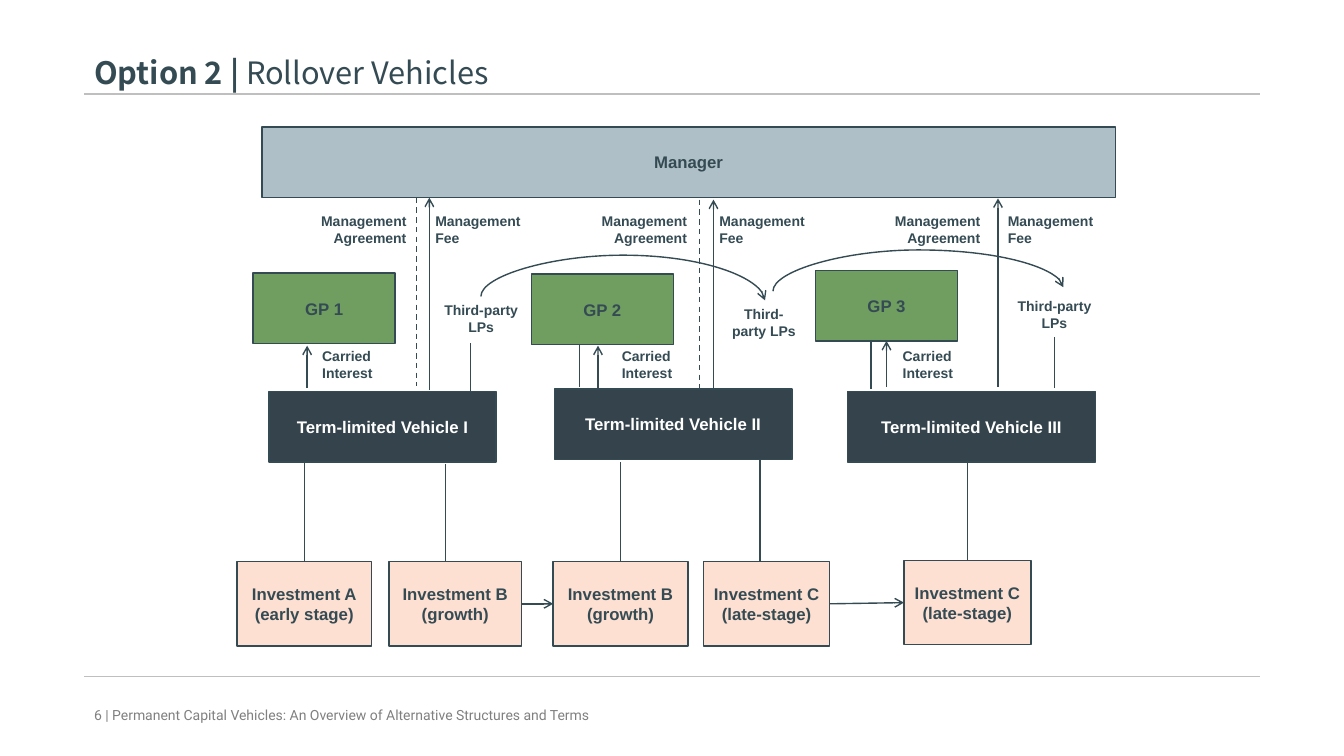
from lxml import etree
from pptx import Presentation
from pptx.dml.color import RGBColor
from pptx.enum.dml import MSO_LINE
from pptx.enum.shapes import MSO_CONNECTOR, MSO_SHAPE
from pptx.enum.text import MSO_ANCHOR, PP_ALIGN
from pptx.oxml.ns import qn
from pptx.util import Cm, Pt

RECT = MSO_SHAPE.RECTANGLE
LINE, CURVE = MSO_CONNECTOR.STRAIGHT, MSO_CONNECTOR.CURVE
DASH = MSO_LINE.DASH
MID, TOP = MSO_ANCHOR.MIDDLE, MSO_ANCHOR.TOP
LEFT, RIGHT, CENTER = PP_ALIGN.LEFT, PP_ALIGN.RIGHT, PP_ALIGN.CENTER

COLORS = {"ink": "354B54", "rule": "BFBFBF", "foot": "808080", "white": "FFFFFF",
          "manager": "AFBFC7", "partner": "709E61", "vehicle": "35444C",
          "deal": "FDE0D1"}

TITLE = [("Option 2 | ", True), ("Rollover Vehicles", False)]
FOOT = "6 | Permanent Capital Vehicles: An Overview of Alternative Structures and Terms"
RULES = [(2.37, 1), (17.04, 0.75)]

HEIGHTS = {"manager": 1.78, "partner": 1.78, "vehicle": 1.78, "deal": 2.13}
BOXES = [
    ("M", "manager", "Manager", 6.6, 3.2, 21.51),
    ("GP1", "partner", "GP 1", 6.38, 6.88, 3.58),
    ("GP2", "partner", "GP 2", 13.39, 6.91, 3.58),
    ("GP3", "partner", "GP 3", 20.55, 6.81, 3.58),
    ("V1", "vehicle", "Term-limited Vehicle I", 6.78, 9.86, 5.72),
    ("V2", "vehicle", "Term-limited Vehicle II", 13.97, 9.8, 5.99),
    ("V3", "vehicle", "Term-limited Vehicle III", 21.36, 9.86, 6.25),
    ("A1", "deal", "Investment A\n(early stage)", 5.97, 14.15, 3.4),
    ("B1", "deal", "Investment B\n(growth)", 9.8, 14.15, 3.35),
    ("B2", "deal", "Investment B\n(growth)", 13.94, 14.15, 3.4),
    ("C2", "deal", "Investment C\n(late-stage)", 17.73, 14.15, 3.18),
    ("C3", "deal", "Investment C\n(late-stage)", 22.78, 14.12, 3.2),
]

LABELS = [
    ("Management Agreement", RIGHT, [(7.44, 5.23, 3.05), (14.61, 5.23, 2.95),
                                     (21.95, 5.23, 3.0)]),
    ("Management Fee", LEFT, [(10.72, 5.23, 2.87), (17.88, 5.23, 2.67),
                              (25.15, 5.23, 2.72)]),
    ("Carried Interest", LEFT, [(7.87, 8.64, 2.59), (15.42, 8.64, 2.59),
                                (22.5, 8.64, 2.59)]),
    ("Third-party LPs", CENTER, [(10.87, 7.47, 2.51), (18.16, 7.57, 2.18),
                                 (25.32, 7.37, 2.51)]),
]

PLAIN = [(11.23, 14.15, 11.68), (19.15, 14.15, 11.58), (14.61, 9.75, 8.69),
         (21.95, 9.8, 8.56), (11.86, 9.86, 8.64), (26.57, 9.78, 8.48)]
DASHED = [(10.49, 4.98, 9.73), (17.63, 5.03, 9.78)]
ARROWS = [(10.82, 9.83, 4.98), (17.98, 9.78, 5.03), (25.15, 9.75, 5.0),
          (7.74, 9.78, 8.71), (15.07, 9.78, 8.71)]
STEMS = [("A1", 11.63), ("B2", 11.63), ("C3", 11.58)]
ROLLS = [("B1", "B2"), ("C2", "C3")]
CARRY = ("GP3", 9.75)
ARCS = [(12.12, 7.47, 19.28, 7.57), (19.48, 7.34, 26.8, 7.24)]
RISE = 1.04


def tint(name):
    return RGBColor.from_string(COLORS[name])


def style(run, size, font, color, bold):
    run.font.size, run.font.name, run.font.bold = Pt(size), font, bold
    run.font.color.rgb = tint(color)


def write(frame, text, size, color="ink", align=LEFT, anchor=TOP,
          font="Arial", bold=True):
    frame.word_wrap = True
    frame.vertical_anchor = anchor
    frame.text = text
    for para in frame.paragraphs:
        para.alignment = align
        for run in para.runs:
            style(run, size, font, color, bold)


def label(text, x, y, w, h, size, **look):
    box = shapes.add_textbox(Cm(x), Cm(y), Cm(w), Cm(h))
    write(box.text_frame, text, size, **look)


def link(x1, y1, x2, y2, kind=LINE, color="ink", width=1, head=False):
    line = shapes.add_connector(kind, Cm(x1), Cm(y1), Cm(x2), Cm(y2))
    line.line.color.rgb = tint(color)
    line.line.width = Pt(width)
    if head:
        etree.SubElement(line.line._get_or_add_ln(), qn("a:tailEnd"), type="arrow")
    etree.SubElement(line._element.spPr, qn("a:effectLst"))
    return line


def arc(x1, y1, x2, y2):
    drop = y2 - y1
    mx, my = (x1 + x2) / 2, (y1 + y2) / 2
    dx, dy = abs(drop) / 2, (x2 - x1) / 2
    turn = 270 if drop > 0 else 90
    side = 1 if drop > 0 else -1
    line = link(mx + dx, my - side * dy, mx - dx, my + side * dy, CURVE, head=True)
    props = line._element.spPr
    props.find(qn("a:xfrm")).set("rot", str(turn * 60000))
    guides = props.find(qn("a:prstGeom")).find(qn("a:avLst"))
    etree.SubElement(guides, qn("a:gd"), name="adj1",
                     fmla=f"val {round(-RISE / drop * 100000)}")


deck = Presentation()
deck.slide_width, deck.slide_height = Cm(33.87), Cm(19.05)
slide = deck.slides.add_slide(deck.slide_layouts[5])
shapes = slide.shapes

for y, width in RULES:
    link(2.12, y, 31.75, y, color="rule", width=width)

title = shapes.title
title.left, title.top, title.width, title.height = Cm(2.12), Cm(1.22), Cm(29.63), Cm(1.19)
title.text_frame.vertical_anchor = MID
head = title.text_frame.paragraphs[0]
head.alignment = LEFT
for text, bold in TITLE:
    run = head.add_run()
    run.text = text
    style(run, 22, "Noto Sans CJK JP", "ink", bold)

label(FOOT, 2.12, 17.5, 15.47, 1.02, 10, color="foot", anchor=MID,
      font="Roboto", bold=False)

boxes = {}
for key, kind, text, x, y, w in BOXES:
    box = shapes.add_shape(RECT, Cm(x), Cm(y), Cm(w), Cm(HEIGHTS[kind]))
    box.shadow.inherit = False
    box.fill.solid()
    box.fill.fore_color.rgb = tint(kind)
    box.line.color.rgb = tint("ink")
    box.line.width = Pt(1)
    color = "white" if kind == "vehicle" else "ink"
    write(box.text_frame, text, 12, color, CENTER, MID)
    boxes[key] = box

for x, y1, y2 in PLAIN:
    link(x, y1, x, y2)
for x, y1, y2 in DASHED:
    link(x, y1, x, y2).line.dash_style = DASH
for x, y1, y2 in ARROWS:
    link(x, y1, x, y2, head=True)

for key, y in STEMS:
    box = boxes[key]
    x = (box.left + box.width / 2) / Cm(1)
    link(x, box.top / Cm(1), x, y).begin_connect(box, 0)

for start, end in ROLLS:
    roll = link(0, 0, 1, 1, head=True)
    roll.begin_connect(boxes[start], 3)
    roll.end_connect(boxes[end], 1)

key, y = CARRY
x = (boxes[key].left + boxes[key].width / 2) / Cm(1)
link(x, y, x, y - 1, head=True).end_connect(boxes[key], 2)

for ends in ARCS:
    arc(*ends)

for text, align, spots in LABELS:
    for x, y, w in spots:
        label(text, x, y, w, 1.12, 10, align=align)

deck.save("out.pptx")
